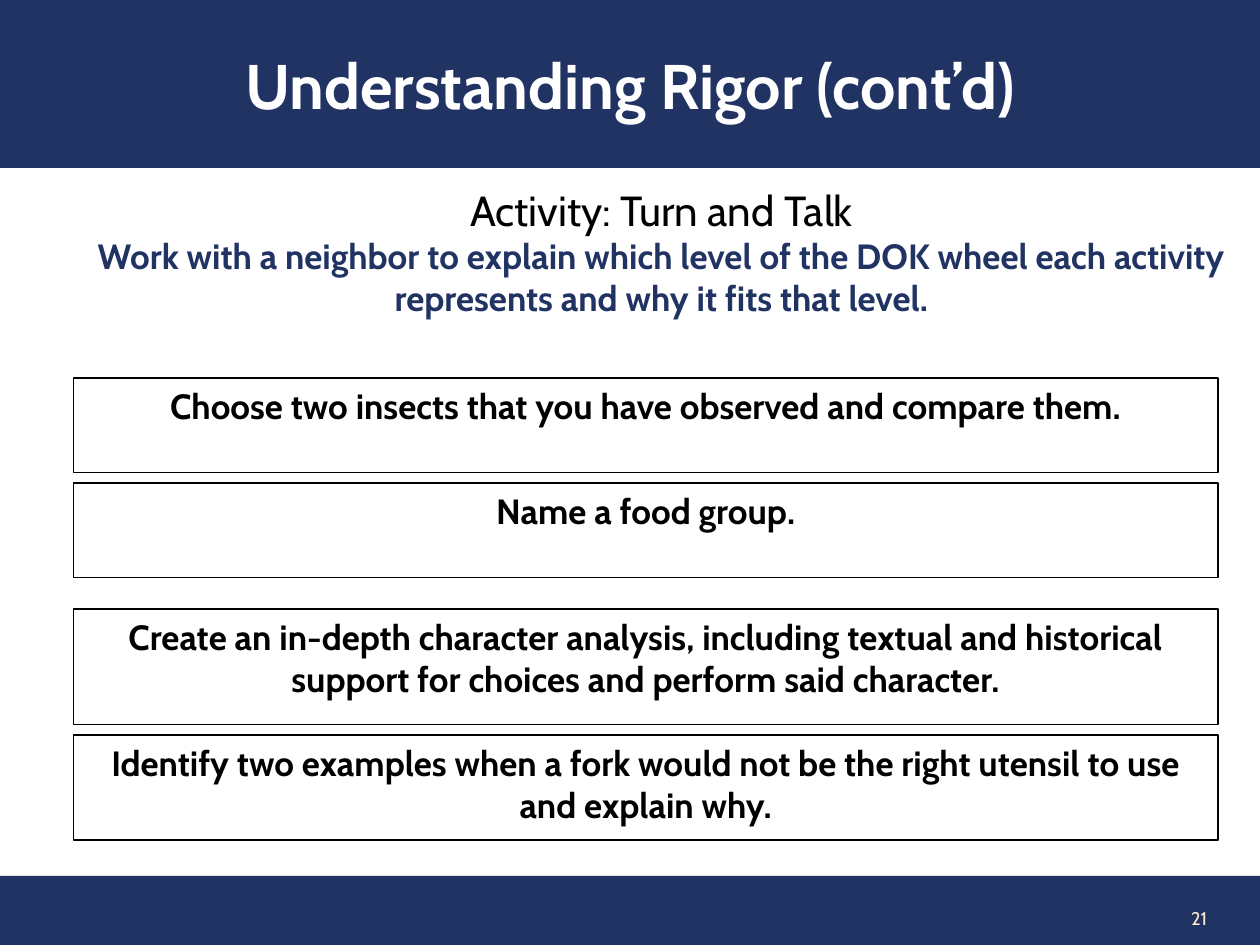
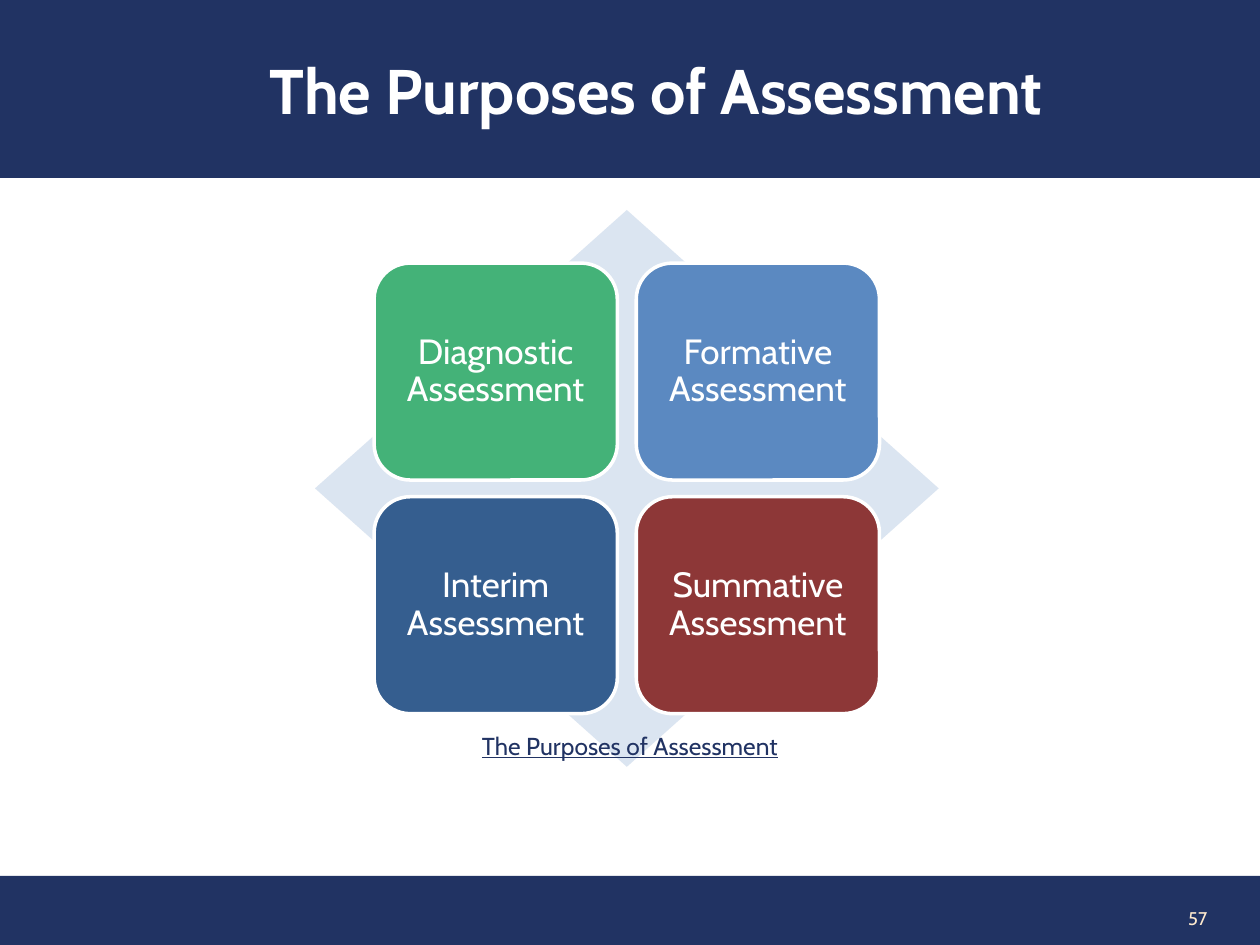
from pptx import Presentation
from pptx.dml.color import RGBColor
from pptx.enum.shapes import MSO_SHAPE as Shape
from pptx.enum.text import MSO_ANCHOR as Anchor, MSO_AUTO_SIZE as AutoSize, PP_ALIGN as Align
from pptx.util import Pt

FONT = "Cabin"
NAVY = RGBColor(0x21, 0x33, 0x63)
CREAM = RGBColor(0xFE, 0xEA, 0xCE)
PALE_BLUE = RGBColor(0xDB, 0xE5, 0xF1)
GREEN = RGBColor(0x44, 0xB2, 0x78)
SKY = RGBColor(0x5B, 0x89, 0xC1)
STEEL = RGBColor(0x35, 0x5E, 0x8F)
BRICK = RGBColor(0x8D, 0x37, 0x37)
WHITE = RGBColor(0xFF, 0xFF, 0xFF)
BLACK = RGBColor(0, 0, 0)

PAGE_WIDTH, PAGE_HEIGHT = 720, 540

ACTIVITIES = [
    (0, 54, "Choose two insects that you have observed and compare them."),
    (60, 54, "Name a food group."),
    (132, 66, "Create an in-depth character analysis, including textual and "
              "historical support for choices and perform said character."),
    (204, 60, "Identify two examples when a fork would not be the right "
              "utensil to use and explain why."),
]
ASSESSMENTS = [("Diagnostic", GREEN), ("Formative", SKY),
               ("Interim", STEEL), ("Summative", BRICK)]


def set_frame(frame, anchor=Anchor.TOP, insets=(7.2, 3.6, 7.2, 3.6)):
    frame.word_wrap = True
    frame.auto_size = AutoSize.NONE
    frame.vertical_anchor = anchor
    (frame.margin_left, frame.margin_top,
     frame.margin_right, frame.margin_bottom) = map(Pt, insets)


def write(para, text, size, color, bold=False, underline=False, align=Align.CENTER):
    para.alignment = align
    span = para.add_run()
    span.text = text
    font = span.font
    font.name, font.size, font.bold = FONT, Pt(size), bold
    font.underline = underline
    font.color.rgb = color


def add_text_box(page, left, top, width, height, anchor=Anchor.TOP):
    box = page.shapes.add_textbox(Pt(left), Pt(top), Pt(width), Pt(height))
    set_frame(box.text_frame, anchor)
    return box.text_frame


def add_box(page, kind, left, top, width, height, fill=None, line=None, weight=0.75):
    box = page.shapes.add_shape(kind, Pt(left), Pt(top), Pt(width), Pt(height))
    box.shadow.inherit = False
    if fill is None:
        box.fill.background()
    else:
        box.fill.solid()
        box.fill.fore_color.rgb = fill
    if line is None:
        box.line.fill.background()
    else:
        box.line.color.rgb = line
        box.line.width = Pt(weight)
    return box


def add_page(deck, title, number, band_height, insets):
    page = deck.slides.add_slide(deck.slide_layouts[5])
    band = page.shapes.title
    band.left, band.top = Pt(0), Pt(0)
    band.width, band.height = Pt(PAGE_WIDTH), Pt(band_height)
    band.fill.solid()
    band.fill.fore_color.rgb = NAVY
    set_frame(band.text_frame, Anchor.MIDDLE, insets)
    write(band.text_frame.paragraphs[0], title, 36, WHITE, bold=True)
    add_footer(page, 500.5, number)
    return page


def add_footer(page, top, number):
    add_box(page, Shape.RECTANGLE, 0, top, PAGE_WIDTH, PAGE_HEIGHT - top, NAVY)
    frame = add_text_box(page, 592, top + 9.7, 105, 29, Anchor.MIDDLE)
    write(frame.paragraphs[0], str(number), 10.5, CREAM, align=Align.RIGHT)


def add_instructions(page, left, top, width, height):
    frame = add_text_box(page, left, top, width, height)
    write(frame.paragraphs[0], "Activity: Turn and Talk", 24, BLACK)
    write(frame.add_paragraph(),
          "Work with a neighbor to explain which level of the DOK wheel "
          "each activity represents and why it fits that level.",
          20, NAVY, bold=True)


def add_activities(page, left, top, width):
    for offset, height, text in ACTIVITIES:
        card = add_box(page, Shape.RECTANGLE, left, top + offset, width, height, line=BLACK)
        set_frame(card.text_frame)
        write(card.text_frame.paragraphs[0], text, 20, BLACK, bold=True)


def add_assessment_matrix(page, left, top, width, height):
    tile_width, tile_height = 139, 124
    step_x, step_y = 149.8, 133.5
    add_box(page, Shape.DIAMOND, left, top, width, height, PALE_BLUE)
    first_left = left + (width - step_x - tile_width) / 2
    first_top = top + (height - step_y - tile_height) / 2
    for index, (name, color) in enumerate(ASSESSMENTS):
        row, column = divmod(index, 2)
        tile = add_box(page, Shape.ROUNDED_RECTANGLE,
                       first_left + column * step_x, first_top + row * step_y,
                       tile_width, tile_height, color, WHITE, 2)
        tile.adjustments[0] = 0.167
        set_frame(tile.text_frame, Anchor.MIDDLE, (6.5, 6.5, 6.5, 6.5))
        para = tile.text_frame.paragraphs[0]
        para.line_spacing = 0.9
        write(para, f"{name} Assessment", 20, WHITE)


def add_rigor_page(deck):
    page = add_page(deck, "Understanding Rigor (cont’d)", 21, 96, (7.2, 7.2, 7.2, 7.2))
    add_instructions(page, 36, 101.7, 684, 65.5)
    add_activities(page, 42, 216, 654)


def add_purposes_page(deck):
    title = "The Purposes of Assessment"
    page = add_page(deck, title, 57, 101.7, (37, 3.6, 7.2, 3.6))
    add_assessment_matrix(page, 180, 120, 356.4, 318.2)
    caption = add_text_box(page, 0, 414, PAGE_WIDTH, 24.5)
    write(caption.paragraphs[0], title, 14, NAVY, underline=True)


def main():
    deck = Presentation()
    deck.slide_width, deck.slide_height = Pt(PAGE_WIDTH), Pt(PAGE_HEIGHT)
    add_rigor_page(deck)
    add_purposes_page(deck)
    deck.save("out.pptx")


if __name__ == "__main__":
    main()
